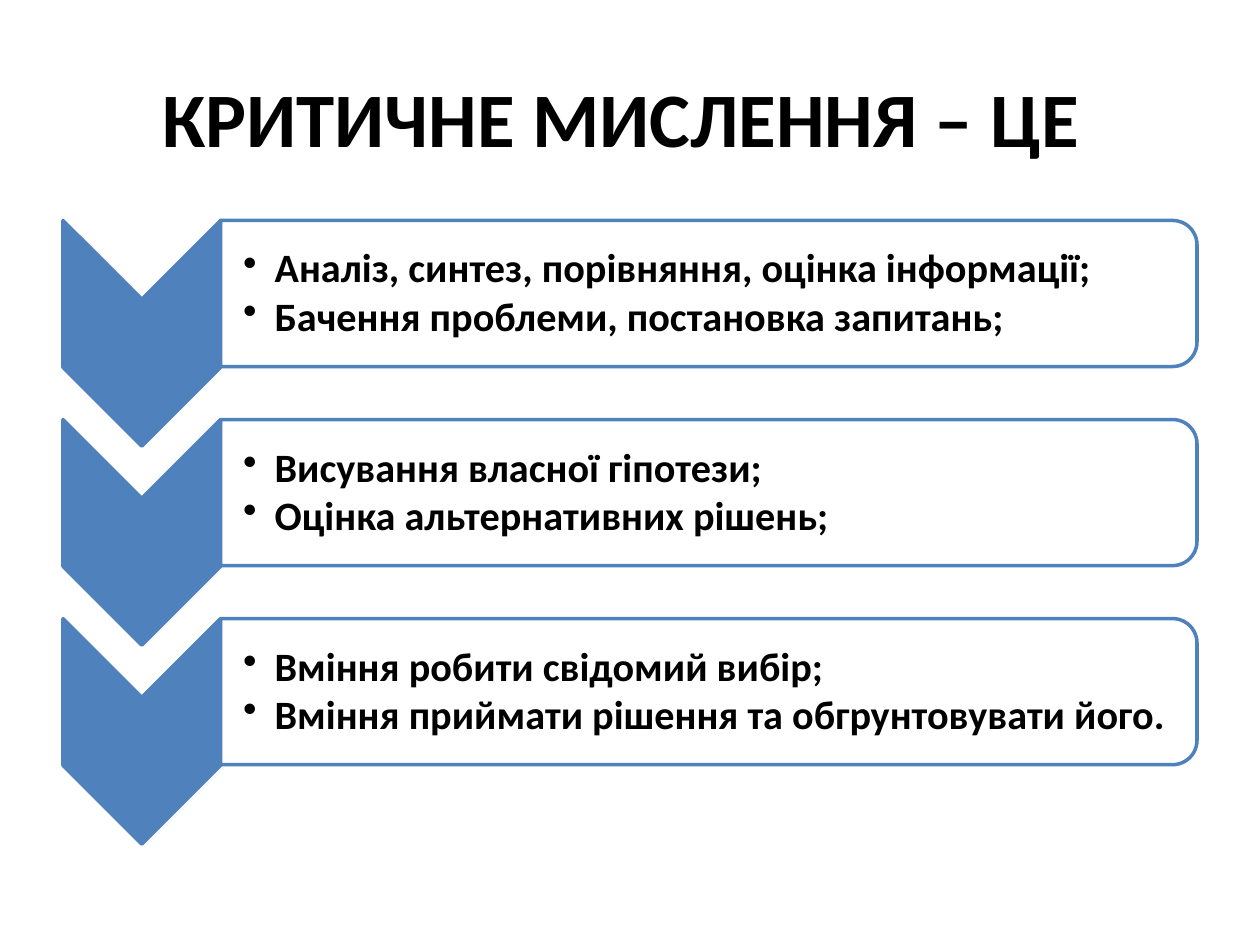
from dataclasses import dataclass

from lxml.etree import SubElement
from pptx import Presentation
from pptx.dml.color import RGBColor
from pptx.enum.shapes import MSO_SHAPE as Preset
from pptx.enum.text import MSO_ANCHOR as Anchor, PP_ALIGN as Align
from pptx.oxml.ns import qn
from pptx.shapes.autoshape import Shape
from pptx.slide import Slide
from pptx.text.text import _Paragraph as Paragraph
from pptx.util import Inches, Pt

BLUE = RGBColor(0x4F, 0x81, 0xBD)
WHITE = RGBColor(0xFF, 0xFF, 0xFF)
BLACK = RGBColor(0x00, 0x00, 0x00)
FIRST_TOP = 1.75
ROW_PITCH = 1.58
BULLET_INDENT = Inches(0.25)


@dataclass(frozen=True)
class Box:
    left: float
    top: float
    width: float
    height: float

    def lengths(self) -> tuple:
        return tuple(map(Inches, (self.left, self.top, self.width, self.height)))

    def before_quarter_turn(self) -> "Box":
        shift = (self.width - self.height) / 2
        return Box(self.left + shift, self.top - shift, self.height, self.width)


@dataclass(frozen=True)
class Step:
    points: tuple[str, ...]


STEPS = (
    Step(("Аналіз, синтез, порівняння, оцінка інформації;",
          "Бачення проблеми, постановка запитань;")),
    Step(("Висування власної гіпотези;",
          "Оцінка альтернативних рішень;")),
    Step(("Вміння робити свідомий вибір;",
          "Вміння приймати рішення та обгрунтовувати його.")),
)


def apply_format(target: object, values: dict) -> None:
    for name, value in values.items():
        setattr(target, name, value)


def add_turned_shape(slide: Slide, preset: Preset, box: Box, fill: RGBColor) -> Shape:
    shape = slide.shapes.add_shape(preset, *box.before_quarter_turn().lengths())
    shape.rotation = 90
    shape.shadow.inherit = False
    shape.fill.solid()
    shape.fill.fore_color.rgb = fill
    shape.line.color.rgb = BLUE
    shape.line.width = Pt(2)
    return shape


def set_opacity(shape: Shape, percent: int) -> None:
    color = shape.fill._xPr.find(qn("a:solidFill"))[0]
    SubElement(color, qn("a:alpha"), val=str(percent * 1000))


def add_bullet(paragraph: Paragraph) -> None:
    properties = paragraph._p.get_or_add_pPr()
    properties.set("marL", str(BULLET_INDENT))
    properties.set("indent", str(-BULLET_INDENT))
    SubElement(properties, qn("a:buChar"), char="•")


def add_text(slide: Slide, box: Box, lines: tuple[str, ...], size: int,
             frame_format: dict, paragraph_format: dict, bulleted: bool = False) -> None:
    frame = slide.shapes.add_textbox(*box.lengths()).text_frame
    apply_format(frame, {"word_wrap": True, "vertical_anchor": Anchor.MIDDLE} | frame_format)
    for index, line in enumerate(lines):
        paragraph = frame.add_paragraph() if index else frame.paragraphs[0]
        apply_format(paragraph, paragraph_format)
        if bulleted:
            add_bullet(paragraph)
        run = paragraph.add_run()
        run.text = line
        apply_format(run.font, {"name": "Calibri", "size": Pt(size), "bold": True})
        run.font.color.rgb = BLACK


def add_step(slide: Slide, step: Step, top: float) -> None:
    add_turned_shape(slide, Preset.CHEVRON, Box(0.5, top, 1.25, 1.79), BLUE)
    panel = add_turned_shape(slide, Preset.ROUND_2_SAME_RECTANGLE,
                             Box(1.75, top, 7.75, 1.16), WHITE)
    set_opacity(panel, 90)
    inset = Inches(0.02)
    add_text(
        slide, Box(1.75, top + 0.06, 7.69, 1.05), step.points, 23,
        {"margin_left": Inches(0.18), "margin_right": inset,
         "margin_top": inset, "margin_bottom": inset},
        {"alignment": Align.LEFT, "line_spacing": 0.9, "space_after": Pt(3)},
        bulleted=True,
    )


def main() -> None:
    presentation = Presentation()
    apply_format(presentation, {"slide_width": Inches(10), "slide_height": Inches(7.5)})
    slide = presentation.slides.add_slide(presentation.slide_layouts[6])
    add_text(slide, Box(0.5, 0.3, 9, 1.25), ("КРИТИЧНЕ МИСЛЕННЯ – ЦЕ ",), 44,
             {}, {"alignment": Align.CENTER})
    for index, step in enumerate(STEPS):
        add_step(slide, step, FIRST_TOP + index * ROW_PITCH)
    presentation.save("out.pptx")


if __name__ == "__main__":
    main()
